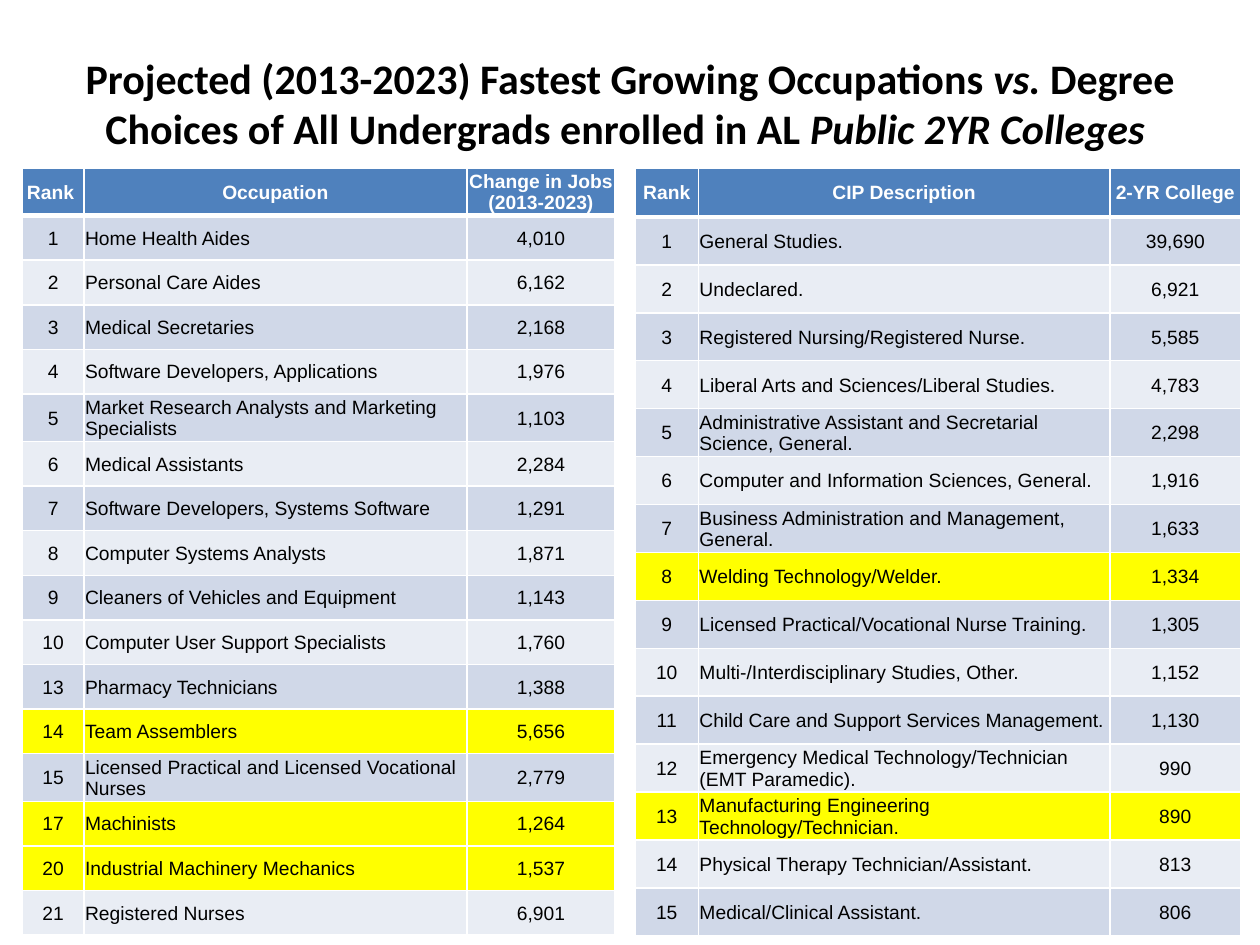
from dataclasses import dataclass

import pptx
import pptx.dml.color
import pptx.enum.text
import pptx.oxml
import pptx.oxml.ns
import pptx.util

Pt = pptx.util.Pt
ALIGN = pptx.enum.text.PP_ALIGN
MIDDLE = pptx.enum.text.MSO_ANCHOR.MIDDLE


@dataclass(frozen=True)
class Theme:
    title_font: str = "Calibri"
    table_font: str = "Arial"
    title_size: float = 24
    table_size: float = 11
    text: str = "000000"
    header_text: str = "FFFFFF"
    header: str = "4F81BD"
    bands: tuple = ("E9EDF4", "D0D8E8")
    highlight: str = "FFFF00"
    border: str = "FFFFFF"


THEME = Theme()

TITLE = [
    ("Projected (2013-2023) Fastest Growing Occupations ", False),
    ("vs.", True),
    (" Degree Choices of All Undergrads enrolled in AL ", False),
    ("Public 2YR Colleges ", True),
]

OCCUPATIONS = [
    ("Rank ", "Occupation", "Change in Jobs (2013-2023)"),
    ("1", "Home Health Aides", "4,010"),
    ("2", "Personal Care Aides", "6,162"),
    ("3", "Medical Secretaries", "2,168"),
    ("4", "Software Developers, Applications", "1,976"),
    ("5", "Market Research Analysts and Marketing Specialists", "1,103"),
    ("6", "Medical Assistants", "2,284"),
    ("7", "Software Developers, Systems Software", "1,291"),
    ("8", "Computer Systems Analysts", "1,871"),
    ("9", "Cleaners of Vehicles and Equipment", "1,143"),
    ("10", "Computer User Support Specialists", "1,760"),
    ("13", "Pharmacy Technicians", "1,388"),
    ("14", "Team Assemblers", "5,656"),
    ("15", "Licensed Practical and Licensed Vocational Nurses", "2,779"),
    ("17", "Machinists", "1,264"),
    ("20", "Industrial Machinery Mechanics", "1,537"),
    ("21", "Registered Nurses", "6,901"),
]

DEGREES = [
    ("Rank", "CIP Description", "2-YR College"),
    ("1", "General Studies.", "39,690"),
    ("2", "Undeclared.", "6,921"),
    ("3", "Registered Nursing/Registered Nurse.", "5,585"),
    ("4", "Liberal Arts and Sciences/Liberal Studies.", "4,783"),
    ("5", "Administrative Assistant and Secretarial Science, General.", "2,298"),
    ("6", "Computer and Information Sciences, General.", "1,916"),
    ("7", "Business Administration and Management, General.", "1,633"),
    ("8", "Welding Technology/Welder.", "1,334"),
    ("9", "Licensed Practical/Vocational Nurse Training.", "1,305"),
    ("10", "Multi-/Interdisciplinary Studies, Other.", "1,152"),
    ("11", "Child Care and Support Services Management.", "1,130"),
    ("12", "Emergency Medical Technology/Technician (EMT Paramedic).", "990"),
    ("13", "Manufacturing Engineering Technology/Technician.", "890"),
    ("14", "Physical Therapy Technician/Assistant.", "813"),
    ("15", "Medical/Clinical Assistant.", "806"),
]


def rgb(value):
    return pptx.dml.color.RGBColor.from_string(value)


def set_font(p, name, size, color, bold):
    p.font.name = name
    p.font.size = Pt(size)
    p.font.bold = bold
    p.font.color.rgb = rgb(color)


def add_title(slide):
    sp = slide.shapes.add_textbox(Pt(36), Pt(21.6), Pt(648), Pt(74))
    tf = sp.text_frame
    tf.word_wrap = True
    tf.vertical_anchor = MIDDLE
    p = tf.paragraphs[0]
    p.alignment = ALIGN.CENTER
    set_font(p, THEME.title_font, THEME.title_size, THEME.text, True)
    for text, italic in TITLE:
        r = p.add_run()
        r.text = text
        r.font.italic = italic


def set_borders(cell, top, bottom):
    tcPr = cell._tc.get_or_add_tcPr()
    for side, width in (("L", 1), ("R", 1), ("T", top), ("B", bottom)):
        tcPr.append(pptx.oxml.parse_xml(
            f'<a:ln{side} {pptx.oxml.ns.nsdecls("a")} w="{Pt(width)}">'
            f'<a:solidFill><a:srgbClr val="{THEME.border}"/></a:solidFill>'
            f'</a:ln{side}>'))


def fill_cell(cell, text, row, centered, fill):
    header = row == 0
    # The heavy rule under the header is shared with the first data row.
    set_borders(cell, 3 if row == 1 else 1, 3 if header else 1)
    cell.fill.solid()
    cell.fill.fore_color.rgb = rgb(fill)
    cell.vertical_anchor = MIDDLE
    cell.margin_left = cell.margin_right = cell.margin_top = Pt(0.72)
    cell.margin_bottom = 0
    p = cell.text_frame.paragraphs[0]
    p.text = text
    p.alignment = ALIGN.CENTER if centered else ALIGN.LEFT
    set_font(p, THEME.table_font, THEME.table_size,
             THEME.header_text if header else THEME.text, header)


def add_ranking(slide, left, widths, heights, rows, highlighted):
    """Add a ranked table; highlighted holds the ranks to mark."""
    frame = slide.shapes.add_table(len(rows), len(widths), Pt(left), Pt(96),
                                   Pt(sum(widths)), Pt(sum(heights)))
    table = frame.table
    for column, width in zip(table.columns, widths):
        column.width = Pt(width)
    for i, (values, height) in enumerate(zip(rows, heights)):
        table.rows[i].height = Pt(height)
        if i == 0:
            fill = THEME.header
        elif values[0] in highlighted:
            fill = THEME.highlight
        else:
            fill = THEME.bands[i % 2]
        for j, text in enumerate(values):
            fill_cell(table.cell(i, j), text, i, i == 0 or j != 1, fill)


def main():
    prs = pptx.Presentation()
    prs.slide_width, prs.slide_height = Pt(720), Pt(540)
    slide = prs.slides.add_slide(prs.slide_layouts[6])
    add_title(slide)
    two_line_rows = (0, 5, 13)
    add_ranking(slide, 12.9, (35, 219, 84.6),
                [27.2 if i in two_line_rows else 25.5
                 for i in range(len(OCCUPATIONS))],
                OCCUPATIONS, ("14", "17", "20"))
    add_ranking(slide, 363, (36, 235.3, 74.7),
                [28] + [27.4] * (len(DEGREES) - 1),
                DEGREES, ("8", "13"))
    prs.save("out.pptx")


if __name__ == "__main__":
    main()
